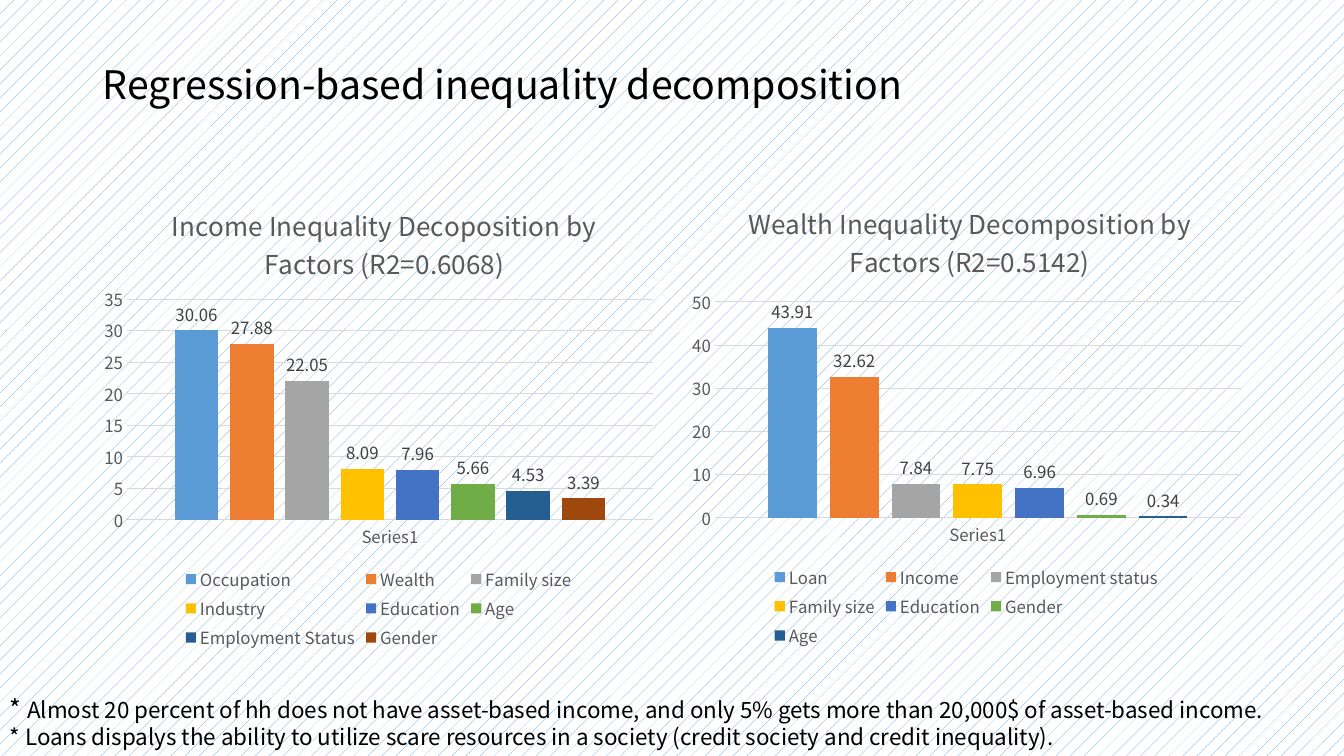
from lxml import etree
from pptx import Presentation
from pptx.chart.data import CategoryChartData
from pptx.dml.color import RGBColor
from pptx.enum.chart import XL_CHART_TYPE, XL_LABEL_POSITION, XL_LEGEND_POSITION, XL_TICK_MARK
from pptx.enum.dml import MSO_PATTERN
from pptx.enum.text import MSO_ANCHOR, PP_ALIGN
from pptx.oxml.ns import qn
from pptx.util import Inches, Pt

COLUMNS = XL_CHART_TYPE.COLUMN_CLUSTERED
OUTSIDE_END = XL_LABEL_POSITION.OUTSIDE_END
BOTTOM = XL_LEGEND_POSITION.BOTTOM
NO_TICK = XL_TICK_MARK.NONE
DOTS = MSO_PATTERN.PERCENT_5
MIDDLE = MSO_ANCHOR.MIDDLE
LEFT = PP_ALIGN.LEFT

COLORS = {"text": "000000", "muted": "595959", "label": "404040", "grid": "D9D9D9",
          "paper": "FFFFFF", "accent": "5B9BD5"}
SERIES_COLORS = ["5B9BD5", "ED7D31", "A5A5A5", "FFC000", "4472C4", "70AD47", "255E91", "9E480E"]

INCOME = {"Occupation": 30.06, "Wealth": 27.88, "Family size": 22.05, "Industry": 8.09,
          "Education": 7.96, "Age": 5.66, "Employment Status": 4.53, "Gender": 3.39}
WEALTH = {"Loan": 43.91, "Income": 32.62, "Employment status": 7.84, "Family size": 7.75,
          "Education": 6.96, "Gender": 0.69, "Age": 0.34}
NOTES = [
    [("* ", 18), ("Almost 20 percent of hh does not have asset-based income, "
                  "and only 5% gets more than 20,000$ of asset-based income.", 16)],
    [("* Loans dispalys the ability to utilize scare resources in a society "
      "(credit society and credit inequality).", 16)],
]


def rgb(name):
    return RGBColor.from_string(COLORS[name])


def set_layout(parent, **fractions):
    """Place a chart part by fractions of the chart's size."""
    layout = parent.find(qn("c:layout"))
    if layout is None:
        layout = etree.Element(qn("c:layout"))
        tx = parent.find(qn("c:tx"))
        if tx is None:
            parent.insert(0, layout)
        else:
            tx.addnext(layout)
    for child in list(layout):
        layout.remove(child)
    manual = etree.SubElement(layout, qn("c:manualLayout"))
    if "w" in fractions:
        etree.SubElement(manual, qn("c:layoutTarget"), val="inner")
    for side in ("x", "y"):
        etree.SubElement(manual, qn(f"c:{side}Mode"), val="edge")
    for side, value in fractions.items():
        etree.SubElement(manual, qn(f"c:{side}"), val=str(value))


class SlideBuilder:
    font = "Noto Sans CJK KR"

    def __init__(self, prs):
        self.s = prs.slides.add_slide(prs.slide_layouts[5])

    def style(self, font, size, color):
        font.name, font.size, font.bold = self.font, Pt(size), False
        font.color.rgb = rgb(color)

    def background(self):
        fill = self.s.background.fill
        fill.patterned()
        fill.pattern = DOTS
        fill.fore_color.rgb = rgb("accent")
        fill.back_color.rgb = rgb("paper")

    def title(self, text, left, top, width, height):
        sp = self.s.shapes.title
        sp.left, sp.top, sp.width, sp.height = map(Inches, (left, top, width, height))
        tf = sp.text_frame
        tf.text = text
        tf.vertical_anchor = MIDDLE
        p = tf.paragraphs[0]
        p.alignment, p.line_spacing = LEFT, 0.9
        self.style(p.font, 28, "text")

    def notes(self, paragraphs, left, top, width, height):
        box = self.s.shapes.add_textbox(*map(Inches, (left, top, width, height)))
        tf = box.text_frame
        tf.word_wrap = True
        for i, runs in enumerate(paragraphs):
            p = tf.add_paragraph() if i else tf.paragraphs[0]
            for text, size in runs:
                r = p.add_run()
                r.text = text
                self.style(r.font, size, "text")

    def chart(self, title, values, left, top, maximum, step, title_x, plot_y, plot_h):
        data = CategoryChartData()
        data.categories = ["Series1"]
        for name, value in values.items():
            data.add_series(name, [value])
        chart = self.s.shapes.add_chart(COLUMNS, Inches(left), Inches(top),
                                        Inches(5.67), Inches(4.76), data).chart
        self.style(chart.font, 12, "muted")

        tf = chart.chart_title.text_frame
        tf.text = title
        self.style(tf.paragraphs[0].font, 18.6, "muted")
        chart.chart_title.include_in_layout = False
        set_layout(chart.chart_title._element, x=title_x, y=0.05)

        chart.has_legend = True
        chart.legend.position = BOTTOM
        chart.legend.include_in_layout = False
        self.style(chart.legend.font, 12, "muted")

        for axis in (chart.category_axis, chart.value_axis):
            axis.major_tick_mark = axis.minor_tick_mark = NO_TICK
            self.style(axis.tick_labels.font, 12, "muted")
        value_axis = chart.value_axis
        value_axis.minimum_scale, value_axis.maximum_scale = 0, maximum
        value_axis.major_unit = step
        value_axis.format.line.fill.background()
        for line in (chart.category_axis.format.line, value_axis.major_gridlines.format.line):
            line.color.rgb = rgb("grid")
            line.width = Pt(0.75)

        plot = chart.plots[0]
        plot.gap_width, plot.overlap, plot.vary_by_categories = 219, -27, False
        for series, color in zip(plot.series, SERIES_COLORS):
            series.format.fill.solid()
            series.format.fill.fore_color.rgb = RGBColor.from_string(color)
            labels = series.data_labels
            labels.show_value, labels.position = True, OUTSIDE_END
            self.style(labels.font, 12, "label")
        set_layout(chart._chartSpace.chart.plotArea, x=0.06, y=plot_y, w=0.92, h=plot_h)


def main():
    prs = Presentation()
    prs.slide_width, prs.slide_height = Inches(13.33), Inches(7.5)
    slide = SlideBuilder(prs)
    slide.background()
    slide.title("Regression-based inequality decomposition", 0.92, 0.4, 11.5, 0.92)
    slide.chart("Income Inequality Decoposition by Factors (R2=0.6068)", INCOME,
                0.92, 1.73, maximum=35, step=5, title_x=0.13, plot_y=0.26, plot_h=0.46)
    slide.chart("Wealth Inequality Decomposition by Factors (R2=0.5142)", WEALTH,
                6.75, 1.71, maximum=50, step=10, title_x=0.11, plot_y=0.27, plot_h=0.45)
    slide.notes(NOTES, 0, 6.83, 13.41, 0.67)
    prs.save("out.pptx")


if __name__ == "__main__":
    main()
